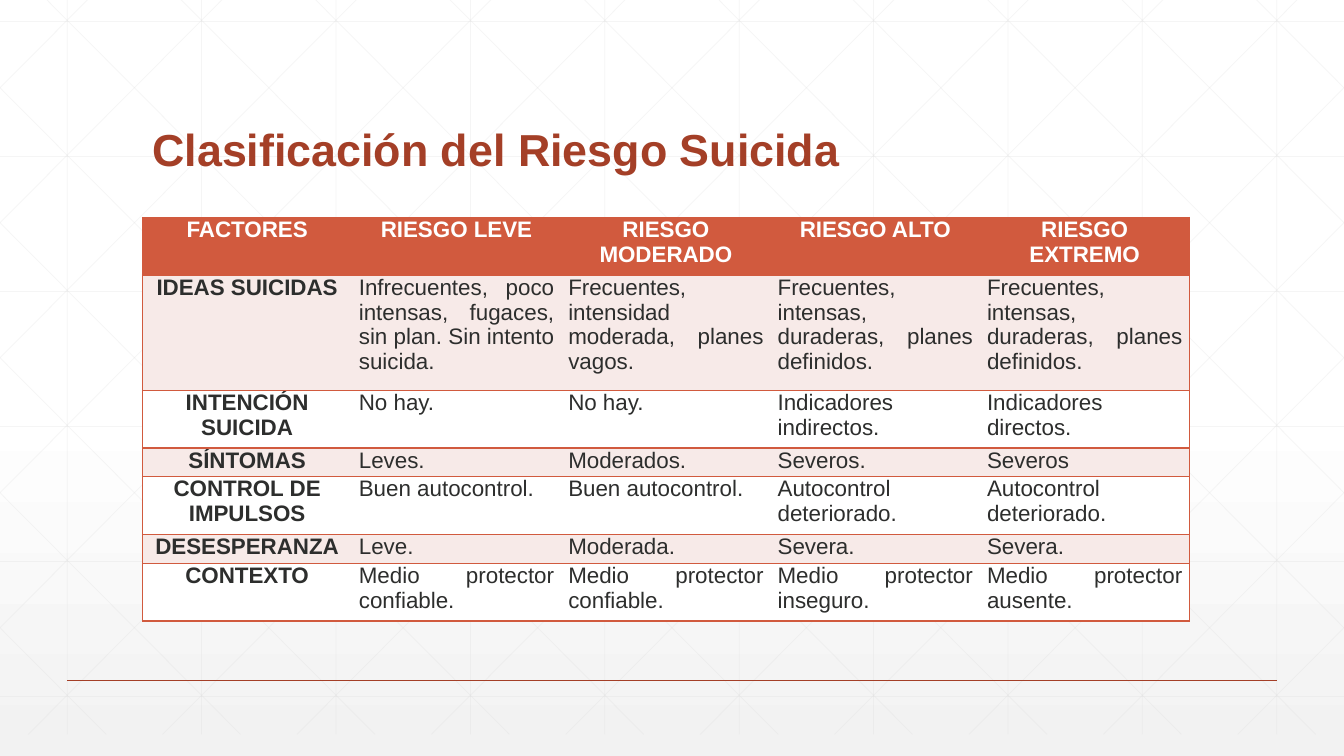
from lxml import etree
from pptx import Presentation
from pptx.dml.color import RGBColor
from pptx.enum.shapes import MSO_CONNECTOR
from pptx.enum.text import MSO_ANCHOR, PP_ALIGN
from pptx.oxml.ns import qn
from pptx.util import Inches, Pt

STRAIGHT = MSO_CONNECTOR.STRAIGHT
BOTTOM, TOP = MSO_ANCHOR.BOTTOM, MSO_ANCHOR.TOP
LEFT, CENTER, JUSTIFY = PP_ALIGN.LEFT, PP_ALIGN.CENTER, PP_ALIGN.JUSTIFY

WIDTH, HEIGHT = Inches(13.333), Inches(7.5)
COLUMNS, ROWS = 10, 5.6
OVERHANG = 0.16  # rows by which the pattern sits above the slide

RUST, CORAL, BLUSH = "A43F27", "D15A3E", "F7EAE8"
WHITE, INK, PALE = "FFFFFF", "2D2E2D", "D9D9D9"

TITLE_FONT = {"name": "Arial", "size": Pt(32), "bold": True}
HEADING_FONT = {"name": "Arial", "size": Pt(16), "bold": True}
BODY_FONT = {**HEADING_FONT, "bold": False}
CELL_FORMAT = {"margin_left": Inches(0.07), "margin_right": Inches(0.07),
               "margin_top": 0, "margin_bottom": 0, "vertical_anchor": TOP}

RISK_TABLE = [
    ["FACTORES", "RIESGO LEVE", "RIESGO MODERADO", "RIESGO ALTO", "RIESGO EXTREMO"],
    ["IDEAS SUICIDAS",
     "Infrecuentes, poco intensas, fugaces, sin plan. Sin intento suicida.",
     "Frecuentes, intensidad moderada, planes vagos.",
     "Frecuentes, intensas, duraderas, planes definidos.",
     "Frecuentes, intensas, duraderas, planes definidos."],
    ["INTENCIÓN SUICIDA", "No hay.", "No hay.",
     "Indicadores indirectos.", "Indicadores directos."],
    ["SÍNTOMAS", "Leves.", "Moderados.", "Severos.", "Severos"],
    ["CONTROL DE IMPULSOS", "Buen autocontrol.", "Buen autocontrol.",
     "Autocontrol deteriorado.", "Autocontrol deteriorado."],
    ["DESESPERANZA", "Leve.", "Moderada.", "Severa.", "Severa."],
    ["CONTEXTO", "Medio protector confiable.", "Medio protector confiable.",
     "Medio protector inseguro.", "Medio protector ausente."],
]
LINES_PER_ROW = [2, 4, 2, 1, 2, 1, 2]


def rgb(hex_code):
    return RGBColor.from_string(hex_code)


def apply(target, formats):
    for attribute, value in formats.items():
        setattr(target, attribute, value)


def add_color(parent, hex_code, opacity=100):
    color = etree.SubElement(parent, qn("a:srgbClr"), val=hex_code)
    if opacity < 100:
        etree.SubElement(color, qn("a:alpha"), val=str(opacity * 1000))


class GridSlide:
    """A slide measured in grid columns across and grid rows down."""

    def __init__(self, slide):
        self.slide = slide
        self.shapes = slide.shapes

    def x(self, columns):
        return round(WIDTH * columns / COLUMNS)

    def y(self, rows):
        return round(HEIGHT * rows / ROWS)

    def box(self, left, top, width, height):
        return self.x(left), self.y(top), self.x(width), self.y(height)

    def background(self, stops):
        """Fill the slide downwards with (position, colour, opacity) stops."""
        fill = self.slide.background.fill
        fill.gradient()
        fill.gradient_angle = 270
        stop_list = next(self.slide.element.iter(qn("a:gsLst")))
        for default_stop in list(stop_list):
            stop_list.remove(default_stop)
        for position, hex_code, opacity in stops:
            stop = etree.SubElement(stop_list, qn("a:gs"), pos=str(position * 1000))
            add_color(stop, hex_code, opacity)

    def line(self, start, end, hex_code, weight, opacity=100, shapes=None):
        connector = (shapes or self.shapes).add_connector(
            STRAIGHT, self.x(start[0]), self.y(start[1]), self.x(end[0]), self.y(end[1]))
        connector.line.width = Pt(weight)
        connector.line.color.rgb = rgb(hex_code)
        properties = connector._element.spPr
        if opacity < 100:
            color = next(properties.iter(qn("a:srgbClr")))
            etree.SubElement(color, qn("a:alpha"), val=str(opacity * 1000))
        etree.SubElement(properties, qn("a:effectLst"))

    def pattern(self):
        """Draw the faint lattice of squares and clipped diagonals."""
        lattice = self.shapes.add_group_shape().shapes
        top, bottom = -OVERHANG, ROWS - OVERHANG
        strokes = [((i + 0.5, top), (i + 0.5, bottom)) for i in range(COLUMNS)]
        strokes += [((0, j + OVERHANG), (COLUMNS, j + OVERHANG)) for j in range(6)]
        for i in range(-5, COLUMNS):
            origin = i + 0.19
            first, last = max(0, -origin), min(ROWS, COLUMNS - origin)
            falling = [(origin + run, top + run) for run in (first, last)]
            strokes.append(falling)
            strokes.append([(COLUMNS - x, y) for x, y in falling])
        for start, end in strokes:
            self.line(start, end, PALE, 0.5, 25, lattice)

    def put_text(self, frame, text, font, hex_code, align):
        frame.word_wrap = True
        paragraph = frame.paragraphs[0]
        paragraph.alignment = align
        run = paragraph.add_run()
        run.text = text
        apply(run.font, font)
        run.font.color.rgb = rgb(hex_code)
        return paragraph

    def title(self, text, *place):
        frame = self.shapes.add_textbox(*self.box(*place)).text_frame
        frame.vertical_anchor = BOTTOM
        self.put_text(frame, text, TITLE_FONT, RUST, LEFT).line_spacing = 0.9

    def borders(self, cell, visible):
        properties = cell._tc.get_or_add_tcPr()
        for side in "LRTB":
            edge = etree.SubElement(properties, qn(f"a:ln{side}"), w=str(Pt(1)))
            if side in visible:
                add_color(etree.SubElement(edge, qn("a:solidFill")), CORAL)
            else:
                etree.SubElement(edge, qn("a:noFill"))

    def table(self, content, line_counts, *place):
        """Share the height among rows by the lines of text each one holds."""
        last = len(content[0]) - 1
        left, top, width, height = self.box(*place)
        table = self.shapes.add_table(
            len(content), last + 1, left, top, width, height).table
        for r, (texts, lines) in enumerate(zip(content, line_counts)):
            table.rows[r].height = round(height * lines / sum(line_counts))
            fill = CORAL if r == 0 else BLUSH if r % 2 else WHITE
            for c, text in enumerate(texts):
                cell = table.cell(r, c)
                apply(cell, CELL_FORMAT)
                self.borders(cell, "TB" + "L" * (c == 0) + "R" * (c == last))
                cell.fill.solid()
                cell.fill.fore_color.rgb = rgb(fill)
                heading = r == 0 or c == 0
                self.put_text(cell.text_frame, text,
                              HEADING_FONT if heading else BODY_FONT,
                              WHITE if r == 0 else INK,
                              CENTER if heading else JUSTIFY)


def main():
    deck = Presentation()
    apply(deck, {"slide_width": WIDTH, "slide_height": HEIGHT})
    page = GridSlide(deck.slides.add_slide(deck.slide_layouts[6]))
    page.background([(0, WHITE, 100), (53, WHITE, 100), (100, "F2F2F2", 65)])
    page.pattern()
    page.line((0.5, 5.04), (9.5, 5.04), RUST, 1)
    page.title("Clasificación del Riesgo Suicida", 1.06, 0.41, 7.88, 0.93)
    page.table(RISK_TABLE, LINES_PER_ROW, 1.06, 1.61, 7.79, 2.99)
    deck.save("out.pptx")


if __name__ == "__main__":
    main()
